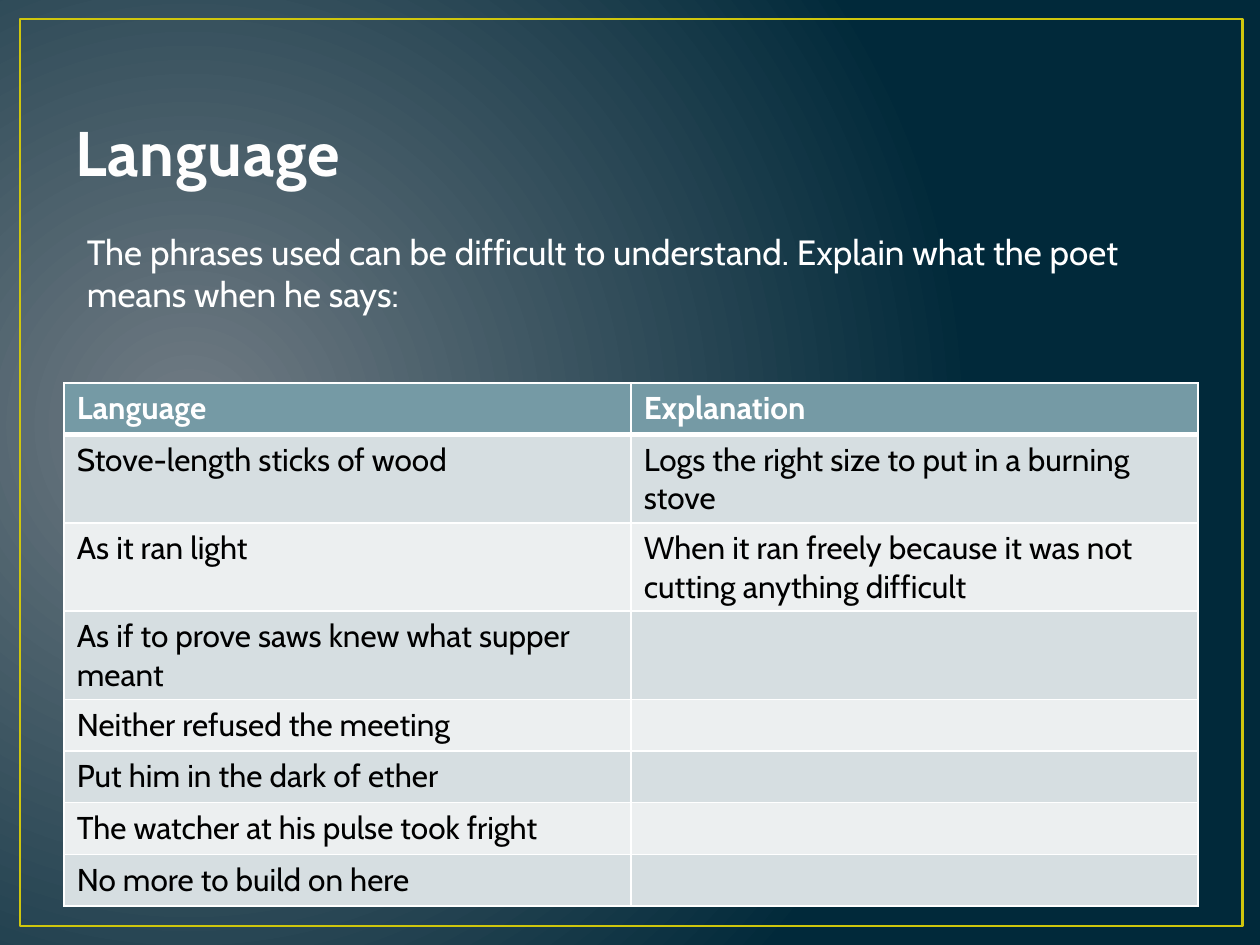
from lxml import etree
from pptx import Presentation
from pptx.dml.color import RGBColor as RGB
from pptx.enum.shapes import MSO_SHAPE as Shape
from pptx.enum.text import MSO_ANCHOR as Anchor, MSO_AUTO_SIZE as Fit
from pptx.oxml import parse_xml
from pptx.oxml.ns import nsdecls, qn
from pptx.util import Inches, Pt

GLOW, NAVY = RGB(0x71, 0x7C, 0x84), RGB(0x01, 0x29, 0x3A)
GOLD, TEAL = RGB(0xCF, 0xC6, 0x0D), RGB(0x75, 0x9A, 0xA5)
DARK, PALE = RGB(0xD6, 0xDE, 0xE1), RGB(0xEC, 0xEF, 0xF0)
WHITE, CREAM, BLACK = RGB(255, 255, 255), RGB(0xFE, 0xFE, 0xFE), RGB(0, 0, 0)

ROWS = [
    ("Language", "Explanation"),
    ("Stove-length sticks of wood", "Logs the right size to put in a burning stove"),
    ("As it ran light",
     "When it ran freely because it was not cutting anything difficult"),
    ("As if to prove saws knew what supper meant", ""),
    ("Neither refused the meeting", ""),
    ("Put him in the dark of ether", ""),
    ("The watcher at his pulse took fright", ""),
    ("No more to build on here", ""),
]


def write(frame, text, size, color, bold=False):
    run = frame.paragraphs[0].add_run()
    run.text = text
    font = run.font
    font.name, font.size, font.bold = "Cabin", Pt(size), bold
    font.color.rgb = color
    return run


def edge(cell, side, width):
    line = etree.SubElement(cell._tc.get_or_add_tcPr(), qn(f"a:ln{side}"), w=str(Pt(width)))
    fill = etree.SubElement(line, qn("a:solidFill"))
    etree.SubElement(fill, qn("a:srgbClr"), val=str(WHITE))


deck = Presentation()
deck.slide_width, deck.slide_height = Inches(10), Inches(7.5)
slide = deck.slides.add_slide(deck.slide_layouts[6])
shapes = slide.shapes

# Background: a round glow left of centre
back = slide.background.fill
back.gradient()
for stop, color, place in zip(back.gradient_stops, (GLOW, NAVY), (0, 1)):
    stop.color.rgb, stop.position = color, place
lin = slide._element.find(".//" + qn("a:lin"))
lin.getparent().replace(lin, parse_xml(
    f'<a:path {nsdecls("a")} path="circle">'
    '<a:fillToRect l="15000" t="50000" r="85000" b="60000"/></a:path>'))

# Gold frame
frame = shapes.add_shape(Shape.RECTANGLE, Inches(0.16), Inches(0.15), Inches(9.7), Inches(7.2))
frame.shadow.inherit = False
frame.fill.background()
frame.line.color.rgb, frame.line.width = GOLD, Pt(1.5)

# Title
title = shapes.add_textbox(Inches(0.5), Inches(0.3), Inches(9), Inches(1.25)).text_frame
title.word_wrap, title.vertical_anchor = True, Anchor.BOTTOM
run = write(title, "Language", 36, CREAM, True)
run.font._element.set("spc", "50")

# Table
width, height = Inches(4.5), Inches(0.41)
table = shapes.add_table(len(ROWS), 2, Inches(0.51), Inches(3.04),
                         2 * width, len(ROWS) * height).table
for col in table.columns:
    col.width = width
for r, texts in enumerate(ROWS):
    table.rows[r].height = height
    head = r == 0
    for c, text in enumerate(texts):
        cell = table.cell(r, c)
        for side in "LRTB":
            thick = (head and side == "B") or (r == 1 and side == "T")
            edge(cell, side, 3 if thick else 1)
        cell.fill.solid()
        cell.fill.fore_color.rgb = TEAL if head else DARK if r % 2 else PALE
        if text:
            write(cell.text_frame, text, 18, WHITE if head else BLACK, head)

# Task
task = shapes.add_textbox(Inches(0.59), Inches(1.78), Inches(8.82), Inches(0.77)).text_frame
task.word_wrap, task.auto_size = True, Fit.SHAPE_TO_FIT_TEXT
write(task, "The phrases used can be difficult to understand. "
      "Explain what the poet means when he says:", 20, WHITE)

deck.save("out.pptx")
